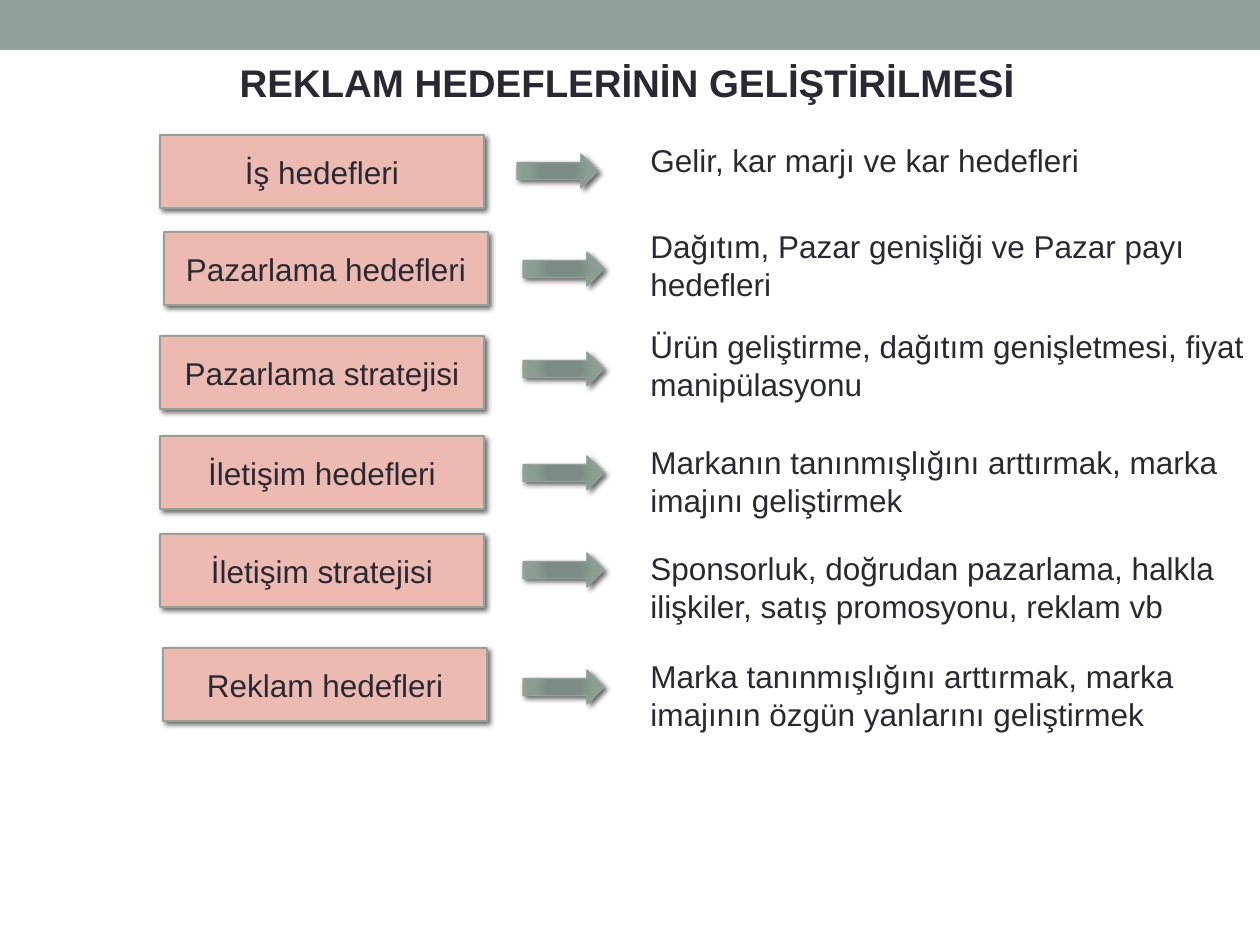
from dataclasses import dataclass

from lxml.etree import SubElement
from pptx import Presentation
from pptx.dml.color import RGBColor
from pptx.enum.shapes import MSO_SHAPE as Preset
from pptx.enum.text import MSO_ANCHOR as Anchor, MSO_AUTO_SIZE as AutoSize, PP_ALIGN as Align
from pptx.oxml import parse_xml
from pptx.oxml.ns import nsdecls, qn
from pptx.util import Pt

EMU_PER_PX = 914400 / 126


@dataclass(frozen=True)
class Theme:
    font: str = "Arial"
    ink: str = "292934"
    sage: str = "93A299"
    rose: str = "EDBAB1"
    shadow: str = "000000"
    arrow_stops: tuple = ((0, "7B8E82"), (34, "7B8D83"), (70, "8A9E92"), (100, "93A299"))
    title_size: int = 22
    body_size: int = 18
    line_width: float = 0.75


THEME = Theme()

TITLE = "REKLAM HEDEFLERİNİN GELİŞTİRİLMESİ"

# goal, (left, top), arrow (left, top), explanation, (top, width, height)
ROWS = [
    ("İş hedefleri", (160, 135), (517, 154),
     "Gelir, kar marjı ve kar hedefleri", (135, 553, 50)),
    ("Pazarlama hedefleri", (164, 232), (523, 252),
     "Dağıtım, Pazar genişliği ve Pazar payı hedefleri", (221, 609, 89)),
    ("Pazarlama stratejisi", (160, 336), (523, 352),
     "Ürün geliştirme, dağıtım genişletmesi, fiyat manipülasyonu", (321, 659, 89)),
    ("İletişim hedefleri", (160, 436), (523, 456),
     "Markanın tanınmışlığını arttırmak, marka imajını geliştirmek", (437, 659, 89)),
    ("İletişim stratejisi", (160, 534), (523, 553),
     "Sponsorluk, doğrudan pazarlama, halkla ilişkiler, satış promosyonu, reklam vb",
     (543, 659, 89)),
    ("Reklam hedefleri", (163, 648), (523, 670),
     "Marka tanınmışlığını arttırmak, marka imajının özgün yanlarını geliştirmek",
     (651, 659, 89)),
]
GOAL_SIZE = (324, 73)
ARROW_SIZE = (81, 34)
EXPLANATION_LEFT = 638


def px(*lengths):
    return [round(length * EMU_PER_PX) for length in lengths]


def apply(target, values):
    for name, value in values.items():
        setattr(target, name, value)


def write(holder, text, size, align=Align.LEFT, bold=False, **frame_format):
    frame = holder.text_frame
    frame.text = text
    apply(frame, {"word_wrap": True, **frame_format})
    paragraph = frame.paragraphs[0]
    paragraph.alignment = align
    font = paragraph.runs[0].font
    apply(font, {"name": THEME.font, "size": Pt(size), "bold": bold})
    font.color.rgb = RGBColor.from_string(THEME.ink)


def fill_solid(shape, color):
    shape.fill.solid()
    shape.fill.fore_color.rgb = RGBColor.from_string(color)


def fill_radial(shape, stops):
    stop_xml = "".join(
        f'<a:gs pos="{position * 1000}"><a:srgbClr val="{color}"/></a:gs>'
        for position, color in stops)
    gradient = parse_xml(
        f'<a:gradFill {nsdecls("a")} rotWithShape="1"><a:gsLst>{stop_xml}</a:gsLst>'
        '<a:path path="circle"><a:fillToRect l="100000" t="100000" r="100000" b="100000"/>'
        '</a:path></a:gradFill>')
    shape.element.spPr.find(qn("a:prstGeom")).addnext(gradient)


def outline_and_shadow(shape):
    shape.line.color.rgb = RGBColor.from_string(THEME.sage)
    shape.line.width = Pt(THEME.line_width)
    shape.shadow.inherit = False
    effects = shape.element.spPr.find(qn("a:effectLst"))
    shadow = SubElement(effects, qn("a:outerShdw"), blurRad=str(Pt(3)), dist=str(Pt(2)),
                        dir="2700000", algn="ctr", rotWithShape="0")
    color = SubElement(shadow, qn("a:srgbClr"), val=THEME.shadow)
    SubElement(color, qn("a:alpha"), val="60000")


def add_band(slide):
    band = slide.shapes.add_shape(Preset.RECTANGLE, *px(0, 0, 1260, 50))
    fill_solid(band, THEME.sage)
    band.line.fill.background()
    band.shadow.inherit = False


def set_title(slide):
    title = slide.shapes.title
    apply(title, dict(zip(("left", "top", "width", "height"), px(227, 53, 896, 59))))
    write(title, TITLE, THEME.title_size, bold=True,
          vertical_anchor=Anchor.TOP, auto_size=AutoSize.SHAPE_TO_FIT_TEXT)


def add_goal(slide, text, position):
    goal = slide.shapes.add_shape(Preset.RECTANGLE, *px(*position, *GOAL_SIZE))
    fill_solid(goal, THEME.rose)
    outline_and_shadow(goal)
    write(goal, text, THEME.body_size, Align.CENTER, vertical_anchor=Anchor.MIDDLE)


def add_arrow(slide, position):
    arrow = slide.shapes.add_shape(Preset.RIGHT_ARROW, *px(*position, *ARROW_SIZE))
    fill_radial(arrow, THEME.arrow_stops)
    outline_and_shadow(arrow)


def add_explanation(slide, text, top, width, height):
    explanation = slide.shapes.add_textbox(*px(EXPLANATION_LEFT, top, width, height))
    write(explanation, text, THEME.body_size, auto_size=AutoSize.SHAPE_TO_FIT_TEXT)


def main():
    deck = Presentation()
    deck.slide_width, deck.slide_height = px(1260, 945)
    slide = deck.slides.add_slide(deck.slide_layouts[5])
    add_band(slide)
    set_title(slide)
    for goal, goal_position, arrow_position, explanation, explanation_box in ROWS:
        add_goal(slide, goal, goal_position)
        add_arrow(slide, arrow_position)
        add_explanation(slide, explanation, *explanation_box)
    deck.save("out.pptx")


if __name__ == "__main__":
    main()
